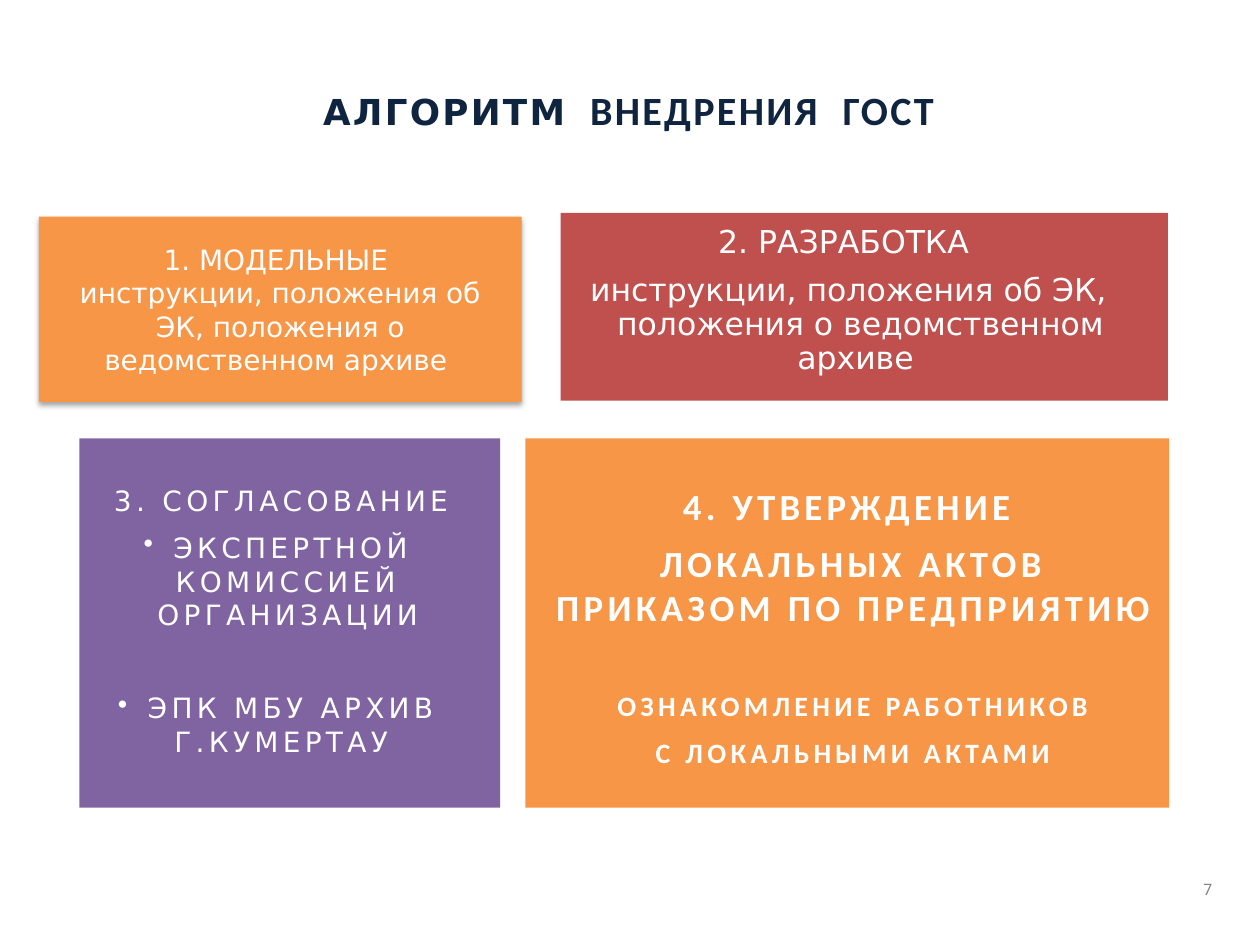
"""Build a slide with the four steps of adopting a records standard."""
import lxml.etree
import pptx
import pptx.dml.color
import pptx.enum.shapes
import pptx.enum.text
import pptx.oxml.ns
import pptx.util

Inches = pptx.util.Inches
Pt = pptx.util.Pt
WHITE, ORANGE, RED, VIOLET = "FFFFFF", "F79646", "C0504D", "8064A2"
NAVY, GREY = "0F243E", "808080"


def color(code):
    return pptx.dml.color.RGBColor.from_string(code)


def node(parent, tag, **attrs):
    name = pptx.oxml.ns.qn("a:" + tag)
    return lxml.etree.SubElement(parent, name, {k: str(v) for k, v in attrs.items()})


def write(para, text, font="DejaVu Sans", size=16, ink=WHITE, bold=False,
          space=0, before=0, line=None, hang=0, bullet=None):
    para.alignment = pptx.enum.text.PP_ALIGN.CENTER
    props = para._p.get_or_add_pPr()
    if hang:
        props.set("marL", str(Inches(hang)))
        props.set("indent", str(-Inches(hang)))
    if bullet:
        node(props, "buChar", char=bullet)
    if before:
        para.space_before = Pt(before)
    if line:
        para.line_spacing = line
    run = para.add_run()
    run.text = text
    run.font.name, run.font.size, run.font.bold = font, Pt(size), bold
    run.font.color.rgb = color(ink)
    if space:
        run._r.get_or_add_rPr().set("spc", str(round(space * 100)))


class Deck:
    def __init__(self):
        self.file = pptx.Presentation()
        self.file.slide_width, self.file.slide_height = Inches(10), Inches(7.5)
        self.slide = self.file.slides.add_slide(self.file.slide_layouts[6])

    def block(self, place, fill, shade=False):
        kind = pptx.enum.shapes.MSO_SHAPE.RECTANGLE
        shape = self.slide.shapes.add_shape(kind, *map(Inches, place))
        shape.shadow.inherit = False
        shape.fill.solid()
        shape.fill.fore_color.rgb = color(fill)
        shape.line.fill.background()
        if shade:
            list_ = shape._element.spPr.find(pptx.oxml.ns.qn("a:effectLst"))
            drop = node(list_, "outerShdw", blurRad=Pt(3.1), dist=Pt(1.8),
                        dir=90 * 60000, rotWithShape=0)
            node(node(drop, "srgbClr", val="000000"), "alpha", val=35000)
        return shape.text_frame

    def label(self, place, anchor="TOP"):
        frame = self.slide.shapes.add_textbox(*map(Inches, place)).text_frame
        frame.word_wrap = True
        frame.margin_left = frame.margin_right = 0
        frame.margin_top = frame.margin_bottom = 0
        frame.vertical_anchor = pptx.enum.text.MSO_ANCHOR[anchor]
        return frame

    def fill(self, frame, rows, gap=7.5, **style):
        for i, (text, extra) in enumerate(rows):
            para = frame.add_paragraph() if i else frame.paragraphs[0]
            write(para, text, **{"before": gap if i else 0, **style, **extra})


def main():
    deck = Deck()
    deck.fill(deck.label((9.41, 6.84, 0.35, 0.43), "MIDDLE"), [("7", {})],
              font="Roboto", size=9, ink=GREY)

    title = deck.label((0.52, 0.68, 8.94, 0.33)).paragraphs[0]
    write(title, "АЛГОРИТМ", size=20.4, ink=NAVY, bold=True, space=1.3)
    write(title, "  ВНЕДРЕНИЯ  ГОСТ", font="Calibri", size=22.9, ink=NAVY,
          bold=True, space=1.3)

    papers = "инструкции, положения об ЭК, положения о ведомственном архиве "
    model = deck.block((0.31, 1.72, 3.83, 1.47), ORANGE, shade=True)
    deck.fill(model, [("1. МОДЕЛЬНЫЕ ", {}), (papers, {})], gap=0)

    deck.block((4.45, 1.69, 4.82, 1.49), RED)
    deck.fill(deck.label((4.33, 1.8, 4.81, 1.34)),
              [("2. РАЗРАБОТКА ", {}), (papers, {})],
              size=18, line=0.9, hang=0.19)

    deck.block((0.63, 3.48, 3.34, 2.93), VIOLET)
    deck.fill(deck.label((0.68, 3.84, 3.21, 2.25)), [
        ("3. СОГЛАСОВАНИЕ ", {}),
        ("ЭКСПЕРТНОЙ КОМИССИЕЙ ОРГАНИЗАЦИИ", {"bullet": "•"}),
        ("ЭПК МБУ АРХИВ Г.КУМЕРТАУ ", {"bullet": "•", "before": 34}),
    ], space=2.5)

    deck.block((4.17, 3.48, 5.11, 2.93), ORANGE)
    deck.fill(deck.label((4.38, 3.84, 4.78, 2.25)), [
        ("4. УТВЕРЖДЕНИЕ ", {}),
        ("ЛОКАЛЬНЫХ АКТОВ ПРИКАЗОМ ПО ПРЕДПРИЯТИЮ", {}),
        ("ОЗНАКОМЛЕНИЕ РАБОТНИКОВ", {"size": 16, "before": 34}),
        ("С ЛОКАЛЬНЫМИ АКТАМИ", {"size": 16}),
    ], font="Calibri", size=21, bold=True, space=2.5)

    deck.file.save("out.pptx")


if __name__ == "__main__":
    main()
